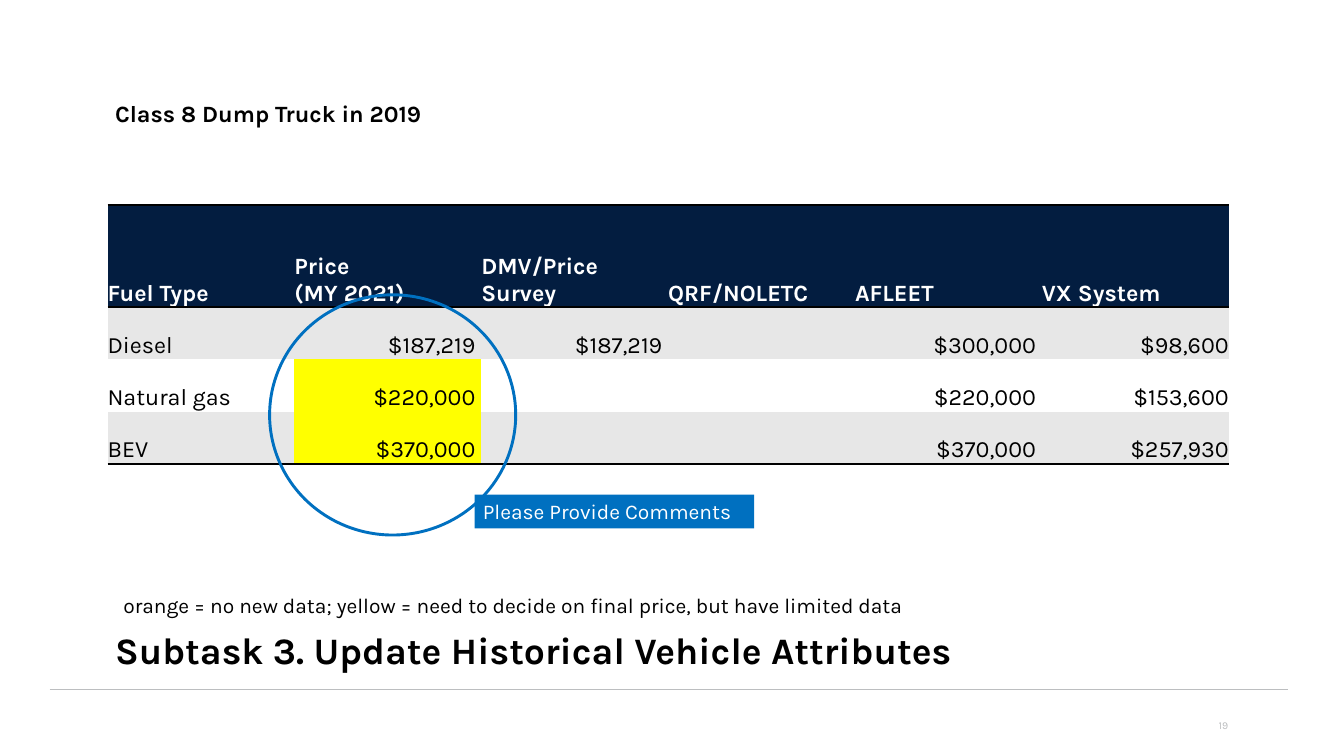
"""Build the slide on historical vehicle prices for Class 8 dump trucks."""
from dataclasses import dataclass, field
from typing import Any

from lxml import etree
from pptx import Presentation
from pptx.dml.color import RGBColor
from pptx.enum.shapes import MSO_CONNECTOR, MSO_SHAPE
from pptx.enum.text import MSO_ANCHOR, PP_ALIGN
from pptx.oxml.ns import qn
from pptx.util import Pt

STRAIGHT = MSO_CONNECTOR.STRAIGHT
RECTANGLE, OVAL = MSO_SHAPE.RECTANGLE, MSO_SHAPE.OVAL
TOP, MIDDLE, BOTTOM = MSO_ANCHOR.TOP, MSO_ANCHOR.MIDDLE, MSO_ANCHOR.BOTTOM
LEFT, RIGHT = PP_ALIGN.LEFT, PP_ALIGN.RIGHT

FONT = "Karla"
COLORS = {
    "black": "000000",
    "white": "FFFFFF",
    "navy": "031D40",
    "band": "E7E7E7",
    "yellow": "FFFF00",
    "blue": "0070C0",
    "rule": "BCBEC0",
}
NO_GRID_STYLE = "{2D5ABB26-0587-4C30-8999-92F81FD0307C}"
COLUMN_WIDTH = 160.2
ROW_HEIGHTS = (87.84, 44.64, 44.64, 44.64)
BORDER_WIDTH = 2
BORDERED_SIDES = {0: ("a:lnB", "a:lnT"), 3: ("a:lnB",)}
RIGHT_GAPS = (0, 5, 5, 5, 5, 0)
LIMITED_DATA = {(2, 1), (3, 1)}
PRICES = (
    ("Fuel Type", "Price\n(MY 2021)", "DMV/Price Survey", "QRF/NOLETC", "AFLEET", "VX System"),
    ("Diesel", "$187,219", "$187,219", "", "$300,000", "$98,600"),
    ("Natural gas", "$220,000", "", "", "$220,000", "$153,600"),
    ("BEV", "$370,000", "", "", "$370,000", "$257,930"),
)


@dataclass(frozen=True)
class Label:
    text: str
    box: tuple[float, float, float, float]
    size: float
    color: str = "black"
    bold: bool = False
    fill: str = ""
    frame: dict[str, Any] = field(default_factory=dict)
    paragraph: dict[str, Any] = field(default_factory=dict)


FLUSH = {"margin_left": 0, "margin_right": 0}
LABELS = (
    Label("Subtask 3. Update Historical Vehicle Attributes", (98.64, 502.56, 990, 77.76), 32,
          bold=True, frame={**FLUSH, "vertical_anchor": BOTTOM},
          paragraph={"line_spacing": 0.9}),
    Label("19", (832.32, 604.08, 227.52, 34.56), 9, "rule",
          frame={"vertical_anchor": MIDDLE}, paragraph={"alignment": RIGHT}),
    Label("Class 8 Dump Truck in 2019", (98.64, 79.2, 990, 405.36), 20,
          bold=True, frame=FLUSH, paragraph={"line_spacing": 1.1}),
    Label("orange = no new data; yellow = need to decide on final price, but have limited data",
          (98.64, 504.72, 856.08, 28.8), 18),
)
COMMENT_REQUEST = Label("Please Provide Comments", (406.8, 424.08, 239.76, 28.8), 18,
                        "white", fill="blue")


def rgb(name: str) -> RGBColor:
    return RGBColor.from_string(COLORS[name])


def apply(target: Any, values: dict[str, Any]) -> None:
    for name, value in values.items():
        setattr(target, name, value)


def style_font(paragraph: Any, size: float, color: str, bold: bool) -> None:
    apply(paragraph.font, {"name": FONT, "size": Pt(size), "bold": bold})
    paragraph.font.color.rgb = rgb(color)


def add_label(slide: Any, label: Label) -> None:
    box = slide.shapes.add_shape(RECTANGLE, *map(Pt, label.box)) if label.fill \
        else slide.shapes.add_textbox(*map(Pt, label.box))
    if label.fill:
        box.shadow.inherit = False
        box.fill.solid()
        box.fill.fore_color.rgb = rgb(label.fill)
        box.line.fill.background()
    frame = box.text_frame
    apply(frame, {"word_wrap": True, "vertical_anchor": TOP, **label.frame})
    frame.text = label.text
    paragraph = frame.paragraphs[0]
    apply(paragraph, {"alignment": LEFT, **label.paragraph})
    style_font(paragraph, label.size, label.color, label.bold)


def add_border(cell: Any, side: str) -> None:
    border = etree.Element(qn(side), w=str(Pt(BORDER_WIDTH)))
    solid = etree.SubElement(border, qn("a:solidFill"))
    etree.SubElement(solid, qn("a:srgbClr"), val=COLORS["black"])
    cell._tc.get_or_add_tcPr().insert(0, border)


def cell_fill(row: int, column: int) -> str:
    if row == 0:
        return "navy"
    if (row, column) in LIMITED_DATA:
        return "yellow"
    return "band" if row % 2 else "white"


def fill_cell(cell: Any, row: int, column: int, text: str) -> None:
    header = row == 0
    numeric = not header and column > 0
    apply(cell, {
        "margin_left": 0,
        "margin_right": Pt(RIGHT_GAPS[column] if numeric else 0),
        "margin_top": 0,
        "margin_bottom": 0,
        "vertical_anchor": BOTTOM,
        "text": text,
    })
    for paragraph in cell.text_frame.paragraphs:
        paragraph.alignment = RIGHT if numeric else LEFT
        style_font(paragraph, 20, "white" if header else "black", header)
    cell.fill.solid()
    cell.fill.fore_color.rgb = rgb(cell_fill(row, column))
    for side in BORDERED_SIDES.get(row, ()):
        add_border(cell, side)


def add_price_table(slide: Any) -> None:
    columns = len(PRICES[0])
    frame = slide.shapes.add_table(len(PRICES), columns, Pt(92.16), Pt(175.68),
                                   Pt(COLUMN_WIDTH * columns), Pt(sum(ROW_HEIGHTS)))
    frame.element.find(".//" + qn("a:tableStyleId")).text = NO_GRID_STYLE
    prices = frame.table
    for column in prices.columns:
        column.width = Pt(COLUMN_WIDTH)
    for row, (height, texts) in enumerate(zip(ROW_HEIGHTS, PRICES)):
        prices.rows[row].height = Pt(height)
        for column, text in enumerate(texts):
            fill_cell(prices.cell(row, column), row, column, text)


def add_footer_rule(slide: Any) -> None:
    rule = slide.shapes.add_connector(STRAIGHT, Pt(42.48), Pt(590.4), Pt(1103.76), Pt(590.4))
    rule.line.color.rgb = rgb("rule")
    rule.line.width = Pt(0.5)
    etree.SubElement(rule.element.spPr, qn("a:effectLst"))


def add_price_circle(slide: Any) -> None:
    circle = slide.shapes.add_shape(OVAL, Pt(231.12), Pt(252.72), Pt(210.96), Pt(205.92))
    circle.shadow.inherit = False
    circle.fill.background()
    circle.line.color.rgb = rgb("blue")
    circle.line.width = Pt(2.5)


def main() -> None:
    deck = Presentation()
    apply(deck, {"slide_width": Pt(1152), "slide_height": Pt(648)})
    slide = deck.slides.add_slide(deck.slide_layouts[6])
    add_footer_rule(slide)
    for label in LABELS:
        add_label(slide, label)
    add_price_table(slide)
    add_price_circle(slide)
    add_label(slide, COMMENT_REQUEST)
    deck.save("out.pptx")


if __name__ == "__main__":
    main()
